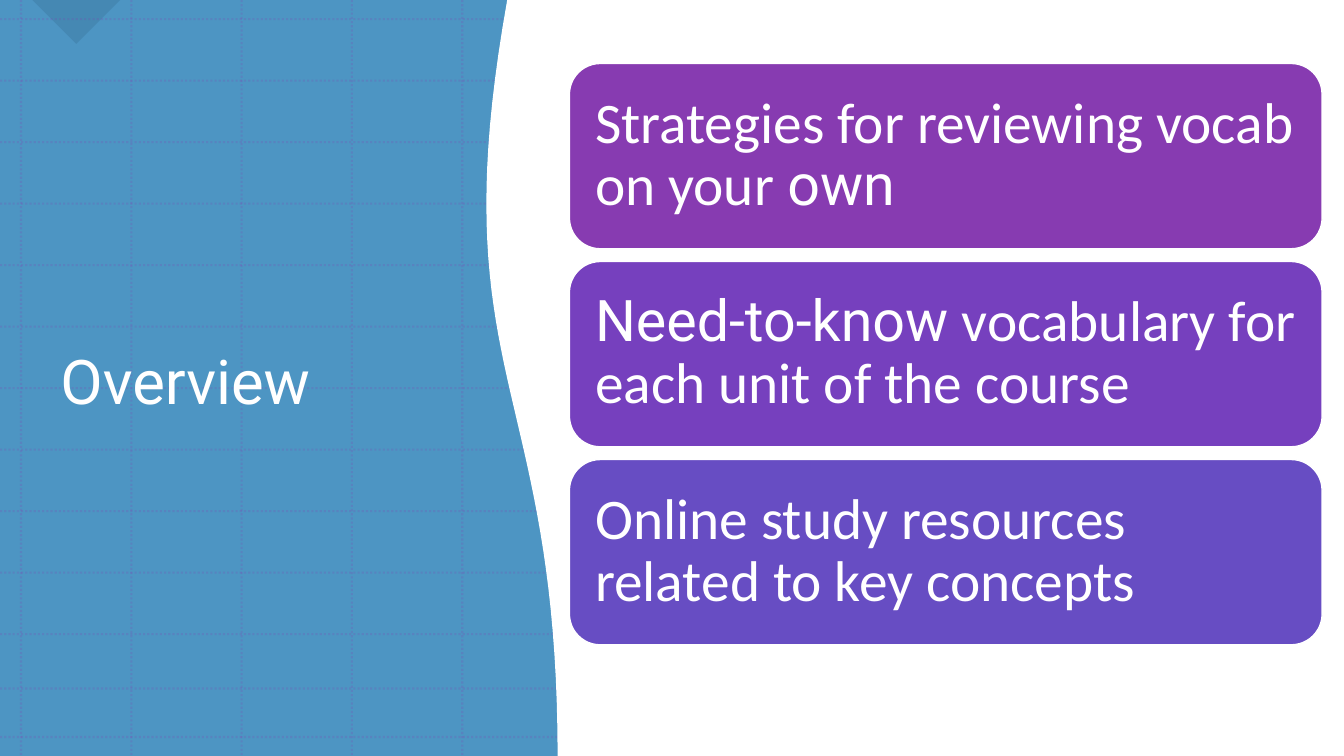
from lxml import etree
from pptx import Presentation
from pptx.dml.color import RGBColor
from pptx.enum import dml, shapes, text
from pptx.oxml import ns
from pptx.util import Cm, Pt

# Content
HEADING = "Overview"
TOPICS = [
    ("purple", [("Strategies for reviewing vocab on your ", "Calibri"), ("own", "Roboto")]),
    ("violet", [("Need-to-know", "Roboto"),
                (" vocabulary for each unit of the course", "Calibri")]),
    ("indigo", [("Online study resources related to key concepts", "Calibri")]),
]
COLORS = {"blue": "4D95C3", "navy": "224B66", "white": "FFFFFF",
          "purple": "873BB1", "violet": "7640BE", "indigo": "674DC3"}

# Geometry in centimetres
WIDTH, HEIGHT = 33.87, 19.05
GRID_X = [0.53 + 2.78 * i for i in range(5)]
GRID_Y = [0.48 + 1.55 * i for i in range(11)] + [17.35, 18.57]
CURVE = [(14.07, 19.05), (14.07, 9.55), (11.1, 9.5), (12.8, 0)]
CURVE_STEPS = 40
CARD_LEFT, CARD_TOP, CARD_WIDTH, CARD_HEIGHT, CARD_STEP = 14.35, 1.6, 18.97, 4.67, 4.99


def color(name):
    return RGBColor.from_string(COLORS[name])


def paint(target, name, alpha=None):
    """Give a fill a solid colour, with an opacity in percent."""
    target.solid()
    target.fore_color.rgb = color(name)
    if alpha is not None:
        rgb = target._xPr.find(".//" + ns.qn("a:srgbClr"))
        etree.SubElement(rgb, ns.qn("a:alpha")).set("val", str(alpha * 1000))


def finish(shape, fill, alpha=None, outline=None):
    shape.shadow.inherit = False
    paint(shape.fill, fill, alpha)
    if outline:
        shape.line.color.rgb = color(outline)
        shape.line.width = Pt(1)
    else:
        shape.line.fill.background()


def add_preset(kind, *box):
    return slide.shapes.add_shape(kind, *map(Cm, box))


def add_grid_line(*ends):
    grid_line = slide.shapes.add_connector(shapes.MSO_CONNECTOR.STRAIGHT, *map(Cm, ends))
    grid_line.line.width = Pt(1.5)
    paint(grid_line.line.fill, "purple", 20)
    grid_line.line.dash_style = dml.MSO_LINE.ROUND_DOT
    etree.SubElement(grid_line._element.spPr, ns.qn("a:effectLst"))


def curve_point(t):
    weights = ((1 - t) ** 3, 3 * t * (1 - t) ** 2, 3 * t ** 2 * (1 - t), t ** 3)
    return tuple(Cm(sum(w * p[axis] for w, p in zip(weights, CURVE))) for axis in (0, 1))


def write(frame, runs, size, **frame_format):
    frame_format.update(word_wrap=True, auto_size=text.MSO_AUTO_SIZE.NONE,
                        vertical_anchor=text.MSO_ANCHOR.MIDDLE)
    for key, value in frame_format.items():
        setattr(frame, key, value)
    paragraph = frame.paragraphs[0]
    paragraph.alignment = text.PP_ALIGN.LEFT
    paragraph.line_spacing = 0.9
    for words, face in runs:
        run = paragraph.add_run()
        run.text = words
        run.font.name, run.font.size = face, Pt(size)
        run.font.color.rgb = color("white")


deck = Presentation()
deck.slide_width, deck.slide_height = Cm(WIDTH), Cm(HEIGHT)
slide = deck.slides.add_slide(deck.slide_layouts.get_by_name("Title Only"))

# Blue backdrop with corner triangle
finish(add_preset(shapes.MSO_SHAPE.RECTANGLE, 0, 0, WIDTH, HEIGHT), "blue")
corner = add_preset(shapes.MSO_SHAPE.RIGHT_TRIANGLE, 1.14, -0.79, 1.57, 1.57)
corner.rotation = 315
finish(corner, "navy", 17)

# Dotted grid
for x in GRID_X:
    add_grid_line(x, 0, x, HEIGHT)
for y in GRID_Y:
    add_grid_line(0, y, WIDTH, y)

# Title, lifted above the backdrop
title = slide.shapes.title
title.left, title.top, title.width, title.height = map(Cm, (1.27, 2, 10.36, 15.37))
write(title.text_frame, [(HEADING, "Roboto")], 44)
slide.shapes._spTree.append(title._element)

# White panel with a curved left edge
outline = slide.shapes.build_freeform(Cm(WIDTH), 0)
outline.add_line_segments(
    [(Cm(WIDTH), Cm(HEIGHT))] + [curve_point(i / CURVE_STEPS) for i in range(CURVE_STEPS + 1)])
finish(outline.convert_to_shape(), "white", outline="white")

# Topic cards
for row, (fill, runs) in enumerate(TOPICS):
    card = add_preset(shapes.MSO_SHAPE.ROUNDED_RECTANGLE, CARD_LEFT,
                      CARD_TOP + row * CARD_STEP, CARD_WIDTH, CARD_HEIGHT)
    finish(card, fill, outline="white")
    inset = Cm(0.42)
    write(card.text_frame, runs, 41, margin_left=inset, margin_right=inset,
          margin_top=inset, margin_bottom=inset)

deck.save("out.pptx")
